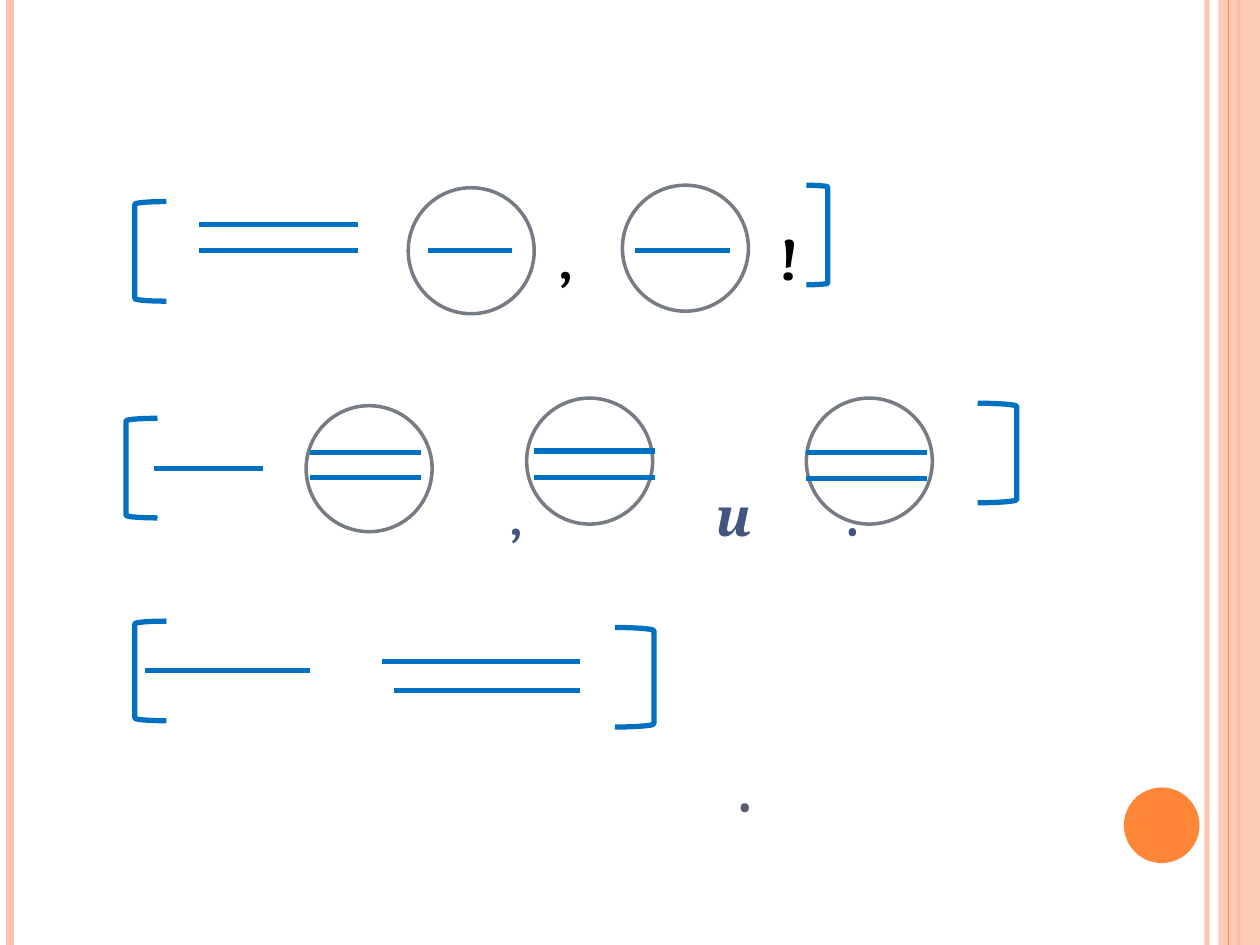
"""Build a slide of sentence diagrams with bracketed subjects and predicates."""
import lxml.etree
import pptx
import pptx.dml.color
import pptx.enum.shapes
import pptx.enum.text
import pptx.oxml
import pptx.oxml.ns
import pptx.util

SHAPE = pptx.enum.shapes.MSO_SHAPE
BLUE, GREY, PEACH, ORANGE = "0070C0", "777C84", "FEC3AE", "FE8637"
BLACK, NAVY, SLATE, WHITE = "000000", "42557F", "575F6D", "FFFFFF"
CELL = 0.1


def cells(count):
    return pptx.util.Inches(count * CELL)


def color(value):
    return pptx.dml.color.RGBColor.from_string(value)


def add_child(parent, tag, **attributes):
    return lxml.etree.SubElement(parent, pptx.oxml.ns.qn(tag), attributes)


def fade(fill_parent, percent):
    tone = fill_parent.find(".//" + pptx.oxml.ns.qn("a:srgbClr"))
    add_child(tone, "a:alpha", val=str(percent * 1000))


class DiagramSlide:
    def __init__(self, deck, font="Cambria", stroke=3):
        self.slide = deck.slides.add_slide(deck.slide_layouts[6])
        self.shapes = self.slide.shapes
        self.font, self.stroke = font, stroke

    def shape(self, kind, box, fill=None, line=None, width=None):
        item = self.shapes.add_shape(kind, *map(cells, box))
        item.shadow.inherit = False
        if fill:
            item.fill.solid()
            item.fill.fore_color.rgb = color(fill)
        else:
            item.fill.background()
        if line:
            item.line.color.rgb = color(line)
            item.line.width = pptx.util.Pt(width or self.stroke)
        else:
            item.line.fill.background()
        return item

    def line(self, x1, y1, x2, y2, tint=BLUE, width=None):
        stroke = self.shapes.add_connector(
            pptx.enum.shapes.MSO_CONNECTOR.STRAIGHT, *map(cells, (x1, y1, x2, y2)))
        stroke.line.color.rgb = color(tint)
        stroke.line.width = pptx.util.Pt(width or self.stroke)
        add_child(stroke.element.spPr, "a:effectLst")
        return stroke

    def stripe(self, x, tint, width):
        return self.line(x, 0, x, 75, tint, width)

    def circle(self, x, y):
        self.shape(SHAPE.OVAL, (x, y, 10, 10), WHITE, GREY, 2)

    def bracket(self, kind, x, y, width):
        self.shape(kind, (x, y, width, 7.9), line=BLUE)

    def marks(self, box, top, rows):
        frame = self.shapes.add_textbox(*map(cells, box)).text_frame
        frame.word_wrap = True
        frame.auto_size = pptx.enum.text.MSO_AUTO_SIZE.NONE
        frame.vertical_anchor = pptx.enum.text.MSO_ANCHOR.TOP
        frame.margin_top = cells(top)
        for index, (gap, size, tint, signs) in enumerate(rows):
            row = frame.paragraphs[0] if index == 0 else frame.add_paragraph()
            row.space_before = pptx.util.Pt(gap)
            stops = add_child(row._p.get_or_add_pPr(), "a:tabLst")
            for x, sign in signs:
                add_child(stops, "a:tab", pos=str(int(cells(x))), algn="l")
                run = row.add_run()
                run.text = "\t" + sign
                run.font.name = self.font
                run.font.size = pptx.util.Pt(size)
                run.font.bold = True
                run.font.italic = sign == "и"
                run.font.color.rgb = color(tint)


def main():
    deck = pptx.Presentation()
    deck.slide_width, deck.slide_height = cells(100), cells(75)
    page = DiagramSlide(deck)

    fade(page.stripe(95.8, PEACH, 3).element.spPr, 93)
    page.stripe(0.8, PEACH, 4.5)
    page.stripe(98.3, ORANGE, 1.5)
    fade(page.shape(SHAPE.RECTANGLE, (96.7, 0, 3.3, 75), PEACH).element.spPr, 87)
    page.stripe(97.5, ORANGE, 0.75)
    page.shape(SHAPE.OVAL, (89.2, 62.5, 6, 6), ORANGE)

    for x, y in ((64, 31.6), (41.8, 31.6), (24.3, 32.2), (49.4, 14.7), (32.4, 14.9)):
        page.circle(x, y)

    page.marks((-0.3, 6.6, 93.6, 53.3), 11, (
        (0, 33.6, BLACK, ((43.7, ","), (61.2, "!"))),
        (109, 30.4, NAVY, ((39.8, ","), (56.1, "и"), (66.5, "."))),
        (118, 33.6, SLATE, ((57.9, "."),)),
    ))

    for x, y in ((10.7, 16), (10, 33.2), (10.7, 49.3)):
        page.bracket(SHAPE.LEFT_BRACKET, x, y, 2.5)
    for x, y, width in ((64, 14.7, 1.7), (77.6, 32, 3.1), (48.8, 49.8, 3.1)):
        page.bracket(SHAPE.RIGHT_BRACKET, x, y, width)

    subjects = ((34, 40.6, 19.9), (50.4, 57.9, 19.9), (12.2, 20.9, 37.2),
                (11.5, 24.6, 53.2))
    predicates = ((15.8, 28.4, 17.8), (15.8, 28.4, 19.9),
                  (24.6, 33.4, 35.9), (24.6, 33.4, 37.9),
                  (42.4, 52, 35.8), (42.4, 52, 37.9),
                  (64, 73.6, 35.9), (64, 73.6, 38),
                  (30.3, 46, 52.5), (31.3, 46, 54.8))
    for start, end, y in subjects + predicates:
        page.line(start, y, end, y)

    deck.save("out.pptx")


if __name__ == "__main__":
    main()
